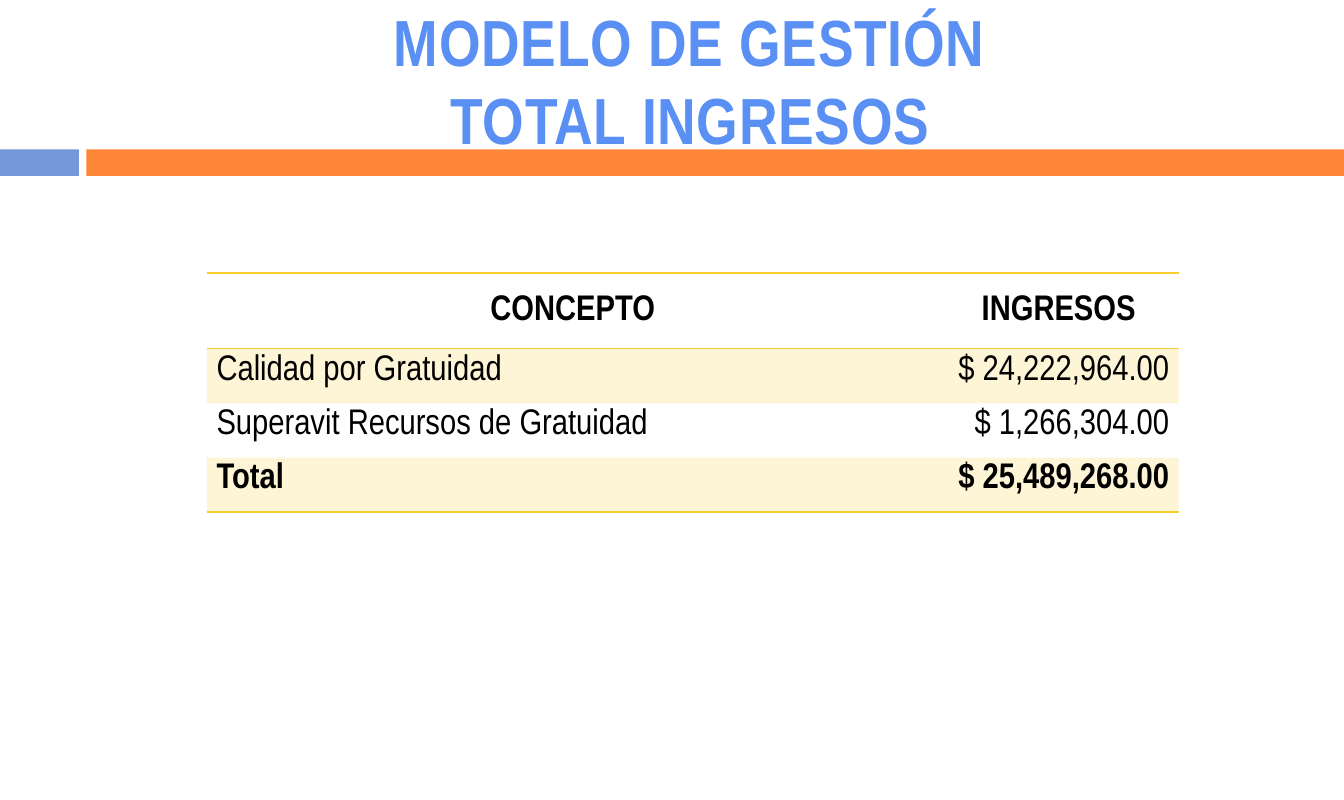
from dataclasses import dataclass

from lxml.etree import SubElement
from pptx import Presentation
from pptx.dml.color import RGBColor
from pptx.enum.shapes import MSO_SHAPE
from pptx.enum.text import MSO_ANCHOR, MSO_AUTO_SIZE, PP_ALIGN
from pptx.oxml.ns import qn
from pptx.util import Inches, Pt


@dataclass(frozen=True)
class Theme:
    font: str = "Arial Narrow"
    title_size: int = 44
    table_size: int = 24
    title: str = "5A90F4"
    text: str = "000000"
    blue: str = "7598D9"
    orange: str = "FE8637"
    gold: str = "F5CD2D"
    band_opacity: int = 20
    border_width: int = 1


THEME = Theme()
NO_STYLE_NO_GRID = "{2D5ABB26-0587-4C30-8999-92F81FD0307C}"
COLUMN_WIDTHS = (6.86, 2.25)
ROW_HEIGHTS = (0.71, 0.51, 0.51, 0.51)
INCOME_ROWS = (
    ("CONCEPTO", "INGRESOS"),
    ("Calidad por Gratuidad", "$ 24,222,964.00"),
    ("Superavit Recursos de Gratuidad", "$ 1,266,304.00"),
    ("Total", "$ 25,489,268.00"),
)


def format_runs(paragraph, size, color, bold):
    for run in paragraph.runs:
        run.font.name = THEME.font
        run.font.size = Pt(size)
        run.font.bold = bold
        run.font.color.rgb = RGBColor.from_string(color)


def add_bar(slide, left, width, color):
    bar = slide.shapes.add_shape(
        MSO_SHAPE.RECTANGLE, Inches(left), Inches(1.4), Inches(width), Inches(0.25)
    )
    bar.shadow.inherit = False
    bar.fill.solid()
    bar.fill.fore_color.rgb = RGBColor.from_string(color)
    bar.line.fill.background()


def set_title(slide, text):
    title = slide.shapes.title
    title.left, title.top = Inches(0.8), Inches(0.12)
    title.width, title.height = Inches(11.34), Inches(1.25)
    frame = title.text_frame
    frame.text = text
    frame.auto_size = MSO_AUTO_SIZE.NONE
    frame.vertical_anchor = MSO_ANCHOR.MIDDLE
    paragraph = frame.paragraphs[0]
    paragraph.alignment = PP_ALIGN.CENTER
    format_runs(paragraph, THEME.title_size, THEME.title, True)
    for run in paragraph.runs:
        run._r.get_or_add_rPr().set("spc", "50")


def add_border(cell, side):
    """Draw a gold line on one side of the cell: "T" (top) or "B" (bottom)."""
    line = SubElement(cell._tc.get_or_add_tcPr(), qn(f"a:ln{side}"))
    line.set("w", str(Pt(THEME.border_width)))
    fill = SubElement(line, qn("a:solidFill"))
    SubElement(fill, qn("a:srgbClr")).set("val", THEME.gold)


def fill_cell(cell, banded):
    if not banded:
        cell.fill.background()
        return
    cell.fill.solid()
    cell.fill.fore_color.rgb = RGBColor.from_string(THEME.gold)
    color = cell._tc.tcPr.find(qn("a:solidFill")).find(qn("a:srgbClr"))
    SubElement(color, qn("a:alpha")).set("val", str(THEME.band_opacity * 1000))


def format_cell(cell, row, column):
    header, total = row == 0, row == len(INCOME_ROWS) - 1
    cell.margin_left = cell.margin_right = Inches(0.09)
    cell.margin_top = cell.margin_bottom = Inches(0.05)
    cell.vertical_anchor = MSO_ANCHOR.MIDDLE if header else MSO_ANCHOR.TOP
    paragraph = cell.text_frame.paragraphs[0]
    body_alignment = (PP_ALIGN.LEFT, PP_ALIGN.RIGHT)[column]
    paragraph.alignment = PP_ALIGN.CENTER if header else body_alignment
    format_runs(paragraph, THEME.table_size, THEME.text, header or total)
    if header:
        add_border(cell, "T")
    if header or total:
        add_border(cell, "B")
    fill_cell(cell, banded=row % 2 == 1)


def add_income_table(slide):
    frame = slide.shapes.add_table(
        len(ROW_HEIGHTS), len(COLUMN_WIDTHS), Inches(1.94), Inches(2.56),
        Inches(sum(COLUMN_WIDTHS)), Inches(sum(ROW_HEIGHTS)),
    )
    table = frame.table
    table._tbl.tblPr.find(qn("a:tableStyleId")).text = NO_STYLE_NO_GRID
    table.horz_banding = False
    for column, width in zip(table.columns, COLUMN_WIDTHS):
        column.width = Inches(width)
    for row, height in zip(table.rows, ROW_HEIGHTS):
        row.height = Inches(height)
    for row, values in enumerate(INCOME_ROWS):
        for column, value in enumerate(values):
            cell = table.cell(row, column)
            cell.text_frame.text = value
            format_cell(cell, row, column)


def main():
    presentation = Presentation()
    presentation.slide_width = Inches(12.6)
    presentation.slide_height = Inches(7.5)
    slide = presentation.slides.add_slide(presentation.slide_layouts[5])
    add_bar(slide, 0, 0.74, THEME.blue)
    add_bar(slide, 0.81, 11.79, THEME.orange)
    set_title(slide, "MODELO DE GESTIÓN\vTOTAL INGRESOS")
    add_income_table(slide)
    presentation.save("out.pptx")


if __name__ == "__main__":
    main()
